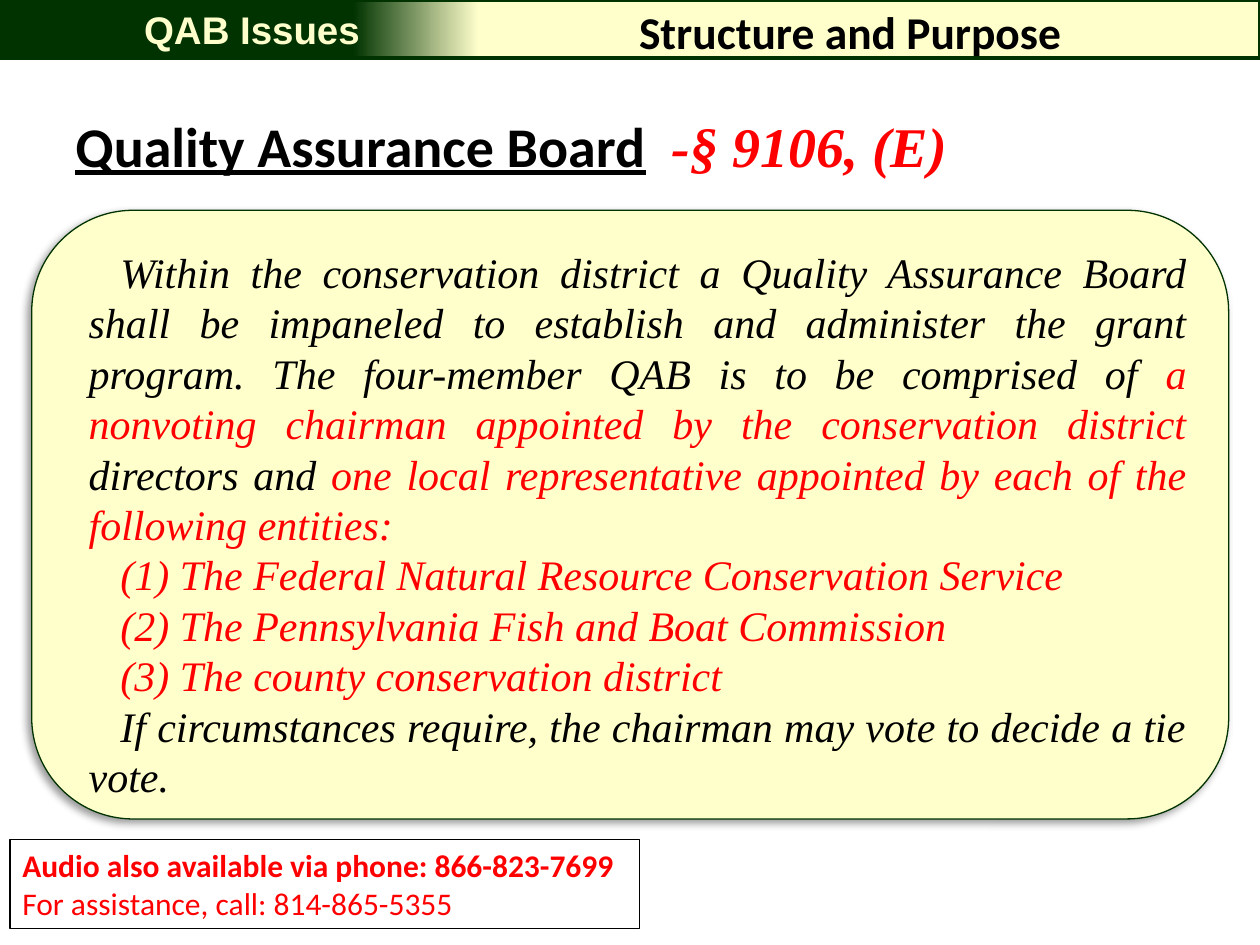
import lxml.etree
import pptx
import pptx.dml.color
import pptx.enum.shapes
import pptx.enum.text
import pptx.oxml.ns
import pptx.util

Cm, Pt = pptx.util.Cm, pptx.util.Pt
ALIGN = pptx.enum.text.PP_ALIGN
ANCHOR = pptx.enum.text.MSO_ANCHOR
SHAPE = pptx.enum.shapes.MSO_SHAPE

COLORS = {"green": "003300", "cream": "FFFFCC", "black": "000000",
          "red": "FF0000", "white": "FFFFFF"}

# Each paragraph is a list of (text, format changes) spans.
TITLE = [[("Structure and Purpose", {})]]
TOPIC = [[("QAB Issues", {})]]
HEADING = [[
    ("Quality Assurance Board", {"underline": True}),
    ("  ", {}),
    ("-§ 9106, (E)", {"font": "Times New Roman", "color": "red", "italic": True}),
]]
RED = {"color": "red"}
STATUTE = [
    [("Within the conservation district a Quality Assurance Board shall be "
      "impaneled to establish and administer the grant program. The four-member "
      "QAB is to be comprised of ", {}),
     ("a nonvoting chairman appointed by the conservation district ", RED),
     ("directors and ", {}),
     ("one local representative appointed by each of the following entities:", RED)],
    [("(1) The Federal Natural Resource Conservation Service", RED)],
    [("(2) The Pennsylvania Fish and Boat Commission", RED)],
    [("(3) The county conservation district", RED)],
    [("If circumstances require, the chairman may vote to decide a tie vote.", {})],
]
PHONE = [
    [("Audio also available via phone: 866-823-7699", {"bold": True})],
    [("For assistance, call: 814-865-5355", {})],
]


def rgb(name):
    return pptx.dml.color.RGBColor.from_string(COLORS[name])


def write(shape, paragraphs, align=ALIGN.LEFT, anchor=ANCHOR.TOP, spacing=None,
          margin=0, indent=0, **base):
    """Fill a shape with paragraphs; base is the format every span starts from."""
    frame = shape.text_frame
    frame.word_wrap = True
    frame.auto_size = pptx.enum.text.MSO_AUTO_SIZE.NONE
    frame.vertical_anchor = anchor
    frame.margin_left = frame.margin_right = Cm(0.25)
    frame.margin_top = frame.margin_bottom = Cm(0.13)
    for number, spans in enumerate(paragraphs):
        para = frame.add_paragraph() if number else frame.paragraphs[0]
        para.alignment = align
        para.space_before = Pt(0)
        if spacing:
            para.line_spacing = Pt(spacing)
        if indent:
            properties = para._p.get_or_add_pPr()
            properties.set("marL", str(Cm(margin)))
            properties.set("indent", str(Cm(indent)))
        for text, changes in spans:
            style = {"color": "black", "bold": False, "italic": False,
                     "underline": False, **base, **changes}
            span = para.add_run()
            span.text = text
            span.font.name = style["font"]
            span.font.size = Pt(style["size"])
            span.font.bold = style["bold"]
            span.font.italic = style["italic"]
            span.font.underline = style["underline"]
            span.font.color.rgb = rgb(style["color"])


def add_panel(page, kind, place, fill, line, width):
    panel = page.shapes.add_shape(kind, *map(Cm, place))
    panel.shadow.inherit = False
    if fill:
        panel.fill.solid()
        panel.fill.fore_color.rgb = rgb(fill)
    panel.line.color.rgb = rgb(line)
    panel.line.width = Pt(width)
    return panel


def add_shadow(shape):
    tag = pptx.oxml.ns.qn
    effects = shape._element.spPr.find(tag("a:effectLst"))
    shadow = lxml.etree.SubElement(
        effects, tag("a:outerShdw"), blurRad=str(Pt(4)), dist=str(Pt(3)),
        dir=str(135 * 60000), algn="tr", rotWithShape="0")
    color = lxml.etree.SubElement(shadow, tag("a:srgbClr"), val=COLORS["black"])
    lxml.etree.SubElement(color, tag("a:alpha"), val="40000")


def main():
    deck = pptx.Presentation()
    deck.slide_width, deck.slide_height = Cm(25.4), Cm(19.05)
    page = deck.slides.add_slide(deck.slide_layouts[5])

    title = page.shapes.title
    title.left, title.top, title.width, title.height = map(Cm, (8.89, 0, 16.51, 1.27))
    write(title, TITLE, align=ALIGN.CENTER, anchor=ANCHOR.MIDDLE,
          font="Calibri", size=26, bold=True)

    band = add_panel(page, SHAPE.RECTANGLE, (0, 0, 25.4, 1.17), None, "green", 2)
    band.fill.gradient()
    band.fill.gradient_angle = 0
    for stop, (position, color) in zip(band.fill.gradient_stops,
                                       [(0.28, "green"), (0.38, "cream")]):
        stop.position = position
        stop.color.rgb = rgb(color)
    title._element.addprevious(band._element)

    heading = page.shapes.add_textbox(*map(Cm, (1.27, 2.11, 22.86, 1.8)))
    write(heading, HEADING, font="Calibri", size=32, bold=True)

    topic = page.shapes.add_textbox(*map(Cm, (0, 0, 10.16, 1.19)))
    write(topic, TOPIC, align=ALIGN.CENTER, font="Arial", size=22,
          color="cream", bold=True)

    statute = add_panel(page, SHAPE.ROUNDED_RECTANGLE, (0.64, 4.24, 24.13, 12.27),
                        "cream", "green", 0.75)
    add_shadow(statute)
    write(statute, STATUTE, align=ALIGN.JUSTIFY, spacing=28.8, margin=0.3,
          indent=0.64, font="Times New Roman", size=24, italic=True)

    phone = add_panel(page, SHAPE.RECTANGLE, (0.2, 16.92, 12.7, 1.8),
                      "white", "black", 0.75)
    write(phone, PHONE, font="Calibri", size=18, color="red")

    deck.save("out.pptx")


if __name__ == "__main__":
    main()
